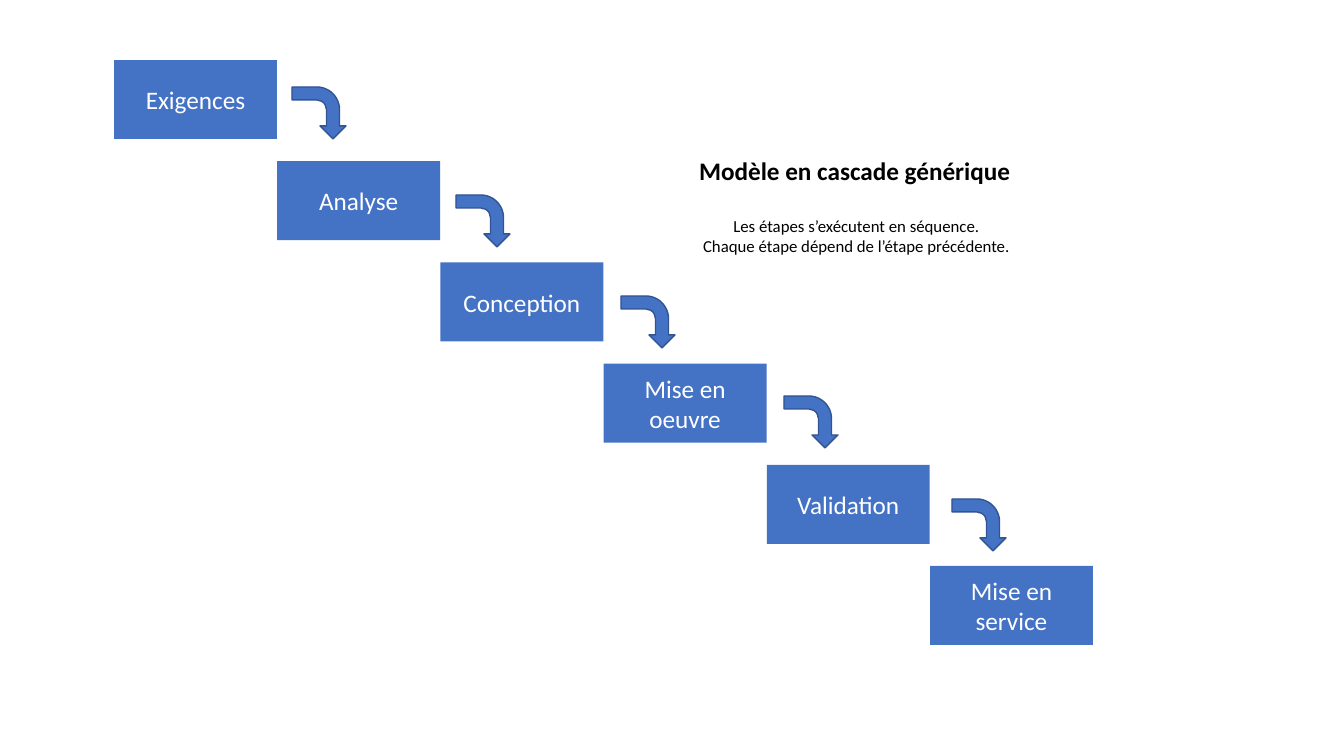
"""Build a slide that shows the generic waterfall model as a staircase of steps."""
import dataclasses

import pptx
import pptx.dml.color
import pptx.enum.shapes
import pptx.enum.text
import pptx.util

HEADING = "Modèle en cascade générique"
REMARKS = [
    "Les étapes s’exécutent en séquence.",
    "Chaque étape dépend de l’étape précédente.",
]
STEPS = ["Exigences", "Analyse", "Conception", "Mise en oeuvre", "Validation", "Mise en service"]

SLIDE_SIZE = (1344, 756)
FIRST_STEP, LAST_STEP = (114, 60), (930, 566)
STEP_SIZE = (163, 79)
TURNS = [(293, 86), (457, 194), (622, 295), (785, 395), (953, 498)]
TURN_SIZE = (52, 54)
HEADING_BOX = (689, 150, 335, 47)
REMARKS_BOX = (689, 211, 335, 51)

SHAPE = pptx.enum.shapes.MSO_SHAPE
ALIGN = pptx.enum.text.PP_ALIGN
ANCHOR = pptx.enum.text.MSO_ANCHOR


@dataclasses.dataclass(frozen=True)
class Theme:
    """Colours, font and type sizes."""
    font: str = "Calibri"
    blue: str = "4472C4"
    edge: str = "325491"
    light: str = "FFFFFF"
    dark: str = "000000"
    large: int = 18
    small: int = 12


THEME = Theme()


def px(length):
    """Turn pixels into EMU."""
    return pptx.util.Emu(round(length * 914400 / 100.8))


def colour(code):
    """Turn a hex code into a colour."""
    return pptx.dml.color.RGBColor.from_string(code)


def write(shape, *lines, size=THEME.large, ink=THEME.dark, bold=False,
          align=ALIGN.CENTER, anchor=ANCHOR.TOP):
    """Fill a shape with formatted paragraphs."""
    frame = shape.text_frame
    frame.text = "\n".join(lines)
    frame.word_wrap = True
    frame.auto_size = pptx.enum.text.MSO_AUTO_SIZE.NONE
    frame.vertical_anchor = anchor
    for paragraph in frame.paragraphs:
        paragraph.alignment = align
        paragraph.line_spacing = 1.0
        font = paragraph.runs[0].font
        font.name, font.size, font.bold = THEME.font, pptx.util.Pt(size), bold
        font.color.rgb = colour(ink)


def add_block(slide, kind, corner, size, edge=None):
    """Add a blue preset shape, outlined if an edge colour is given."""
    block = slide.shapes.add_shape(kind, *map(px, corner + size))
    block.shadow.inherit = False
    block.fill.solid()
    block.fill.fore_color.rgb = colour(THEME.blue)
    if edge:
        block.line.color.rgb = colour(edge)
        block.line.width = pptx.util.Pt(1)
    else:
        block.line.fill.background()
    return block


def main():
    """Draw the steps, the turns between them and the text."""
    deck = pptx.Presentation()
    deck.slide_width, deck.slide_height = map(px, SLIDE_SIZE)
    slide = deck.slides.add_slide(deck.slide_layouts[5])

    for index, step in enumerate(STEPS):
        share = index / (len(STEPS) - 1)
        corner = tuple(a + (b - a) * share for a, b in zip(FIRST_STEP, LAST_STEP))
        block = add_block(slide, SHAPE.RECTANGLE, corner, STEP_SIZE)
        write(block, step, ink=THEME.light, anchor=ANCHOR.MIDDLE)

    for corner in TURNS:
        turn = add_block(slide, SHAPE.BENT_ARROW, corner, TURN_SIZE, edge=THEME.edge)
        turn.rotation = 90

    heading = slide.shapes.title
    heading.left, heading.top, heading.width, heading.height = map(px, HEADING_BOX)
    write(heading, HEADING, bold=True, align=ALIGN.LEFT)

    remarks = slide.shapes.add_textbox(*map(px, REMARKS_BOX))
    write(remarks, *REMARKS, size=THEME.small)

    deck.save("out.pptx")


if __name__ == "__main__":
    main()
